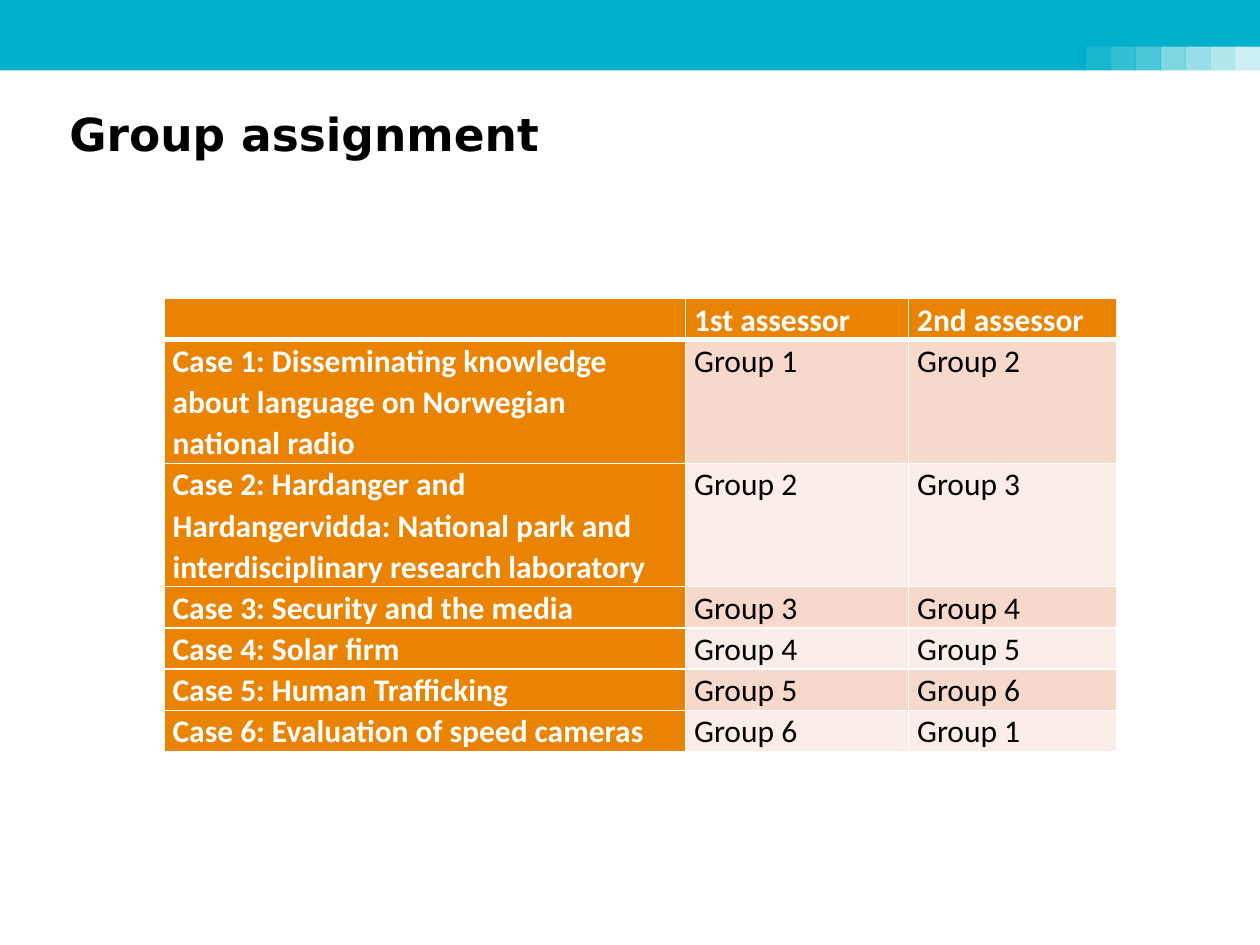
from lxml.etree import SubElement
from pptx import Presentation
from pptx.dml.color import RGBColor
from pptx.enum.shapes import MSO_SHAPE
from pptx.enum.text import MSO_ANCHOR, PP_ALIGN
from pptx.oxml.ns import qn
from pptx.util import Inches, Pt

COLORS = {
    "banner": "00B0CA",
    "header": "E98300",
    "odd_row": "F7D9CC",
    "even_row": "FBEDE7",
    "white": "FFFFFF",
    "black": "000000",
}
FADE_PERCENTS = [90, 80, 70, 50, 40, 30, 20]
ASSESSOR_HEADINGS = ["", "1st assessor", "2nd assessor"]
CASES = [
    "Case 1: Disseminating knowledge about language on Norwegian national radio",
    "Case 2: Hardanger and Hardangervidda: National park and "
    "interdisciplinary research laboratory",
    "Case 3: Security and the media",
    "Case 4: Solar firm",
    "Case 5: Human Trafficking",
    "Case 6: Evaluation of speed cameras",
]
COLUMN_WIDTHS = [4.14, 1.77, 1.65]
ROW_HEIGHTS = [0.32, 0.98, 0.98, 0.32, 0.32, 0.32, 0.32]


def rgb(name):
    """Return the named colour."""
    return RGBColor.from_string(COLORS[name])


def write_text(frame, text, font="Calibri", size=18, color="black", bold=False,
               spacing=None, insets=(0.07, 0, 0.07, 0)):
    """Write one left-aligned, top-anchored paragraph in a text frame or cell."""
    frame.margin_left, frame.margin_top, frame.margin_right, frame.margin_bottom = map(
        Inches, insets)
    frame.vertical_anchor = MSO_ANCHOR.TOP
    paragraph = getattr(frame, "text_frame", frame).paragraphs[0]
    paragraph.alignment = PP_ALIGN.LEFT
    paragraph.line_spacing = spacing
    target = paragraph
    if text:
        target = paragraph.add_run()
        target.text = text
    target.font.name = font
    target.font.size = Pt(size)
    target.font.bold = bold
    target.font.color.rgb = rgb(color)


def paint(shape, color, opacity=100):
    """Fill a shape without outline or shadow, at an opacity in percent."""
    shape.shadow.inherit = False
    shape.fill.solid()
    shape.fill.fore_color.rgb = rgb(color)
    shape.line.fill.background()
    if opacity < 100:
        tint = shape.fill._xPr.find(qn("a:solidFill"))[0]
        SubElement(tint, qn("a:alpha"), val=str(opacity * 1000))


def add_banner(slide, left, top, width, height):
    """Draw the top band with its notch and the row of fading squares."""
    notch_left, notch_top, square = left + 8.62, top + 0.36, 0.2
    right, bottom = left + width, top + height
    outline = [(notch_left, bottom), (notch_left, notch_top + 0.01),
               (right, notch_top + 0.01), (right, top), (left, top)]
    builder = slide.shapes.build_freeform(Inches(left), Inches(bottom))
    builder.add_line_segments([(Inches(x), Inches(y)) for x, y in outline])
    paint(builder.convert_to_shape(), "banner")

    pitch = (right - notch_left - square) / (len(FADE_PERCENTS) - 1)
    squares = slide.shapes.add_group_shape().shapes
    for index, opacity in enumerate(FADE_PERCENTS):
        fading_square = squares.add_shape(
            MSO_SHAPE.RECTANGLE, Inches(notch_left + index * pitch),
            Inches(notch_top), Inches(square), Inches(square))
        paint(fading_square, "banner", opacity)


def add_heading(slide, left, top, width, height):
    """Place and format the title placeholder."""
    title = slide.shapes.title
    title.left, title.top = Inches(left), Inches(top)
    title.width, title.height = Inches(width), Inches(height)
    title.text_frame.word_wrap = True
    write_text(title.text_frame, "Group assignment", font="DejaVu Sans", size=26,
               bold=True, insets=(0.04, 0.04, 0.04, 0.05))


def add_borders(cell, **widths):
    """Draw white cell borders with widths in points, keyed by side."""
    properties = cell._tc.get_or_add_tcPr()
    for side, width in widths.items():
        line = SubElement(properties, qn(f"a:ln{side}"), w=str(Pt(width)))
        fill = SubElement(line, qn("a:solidFill"))
        SubElement(fill, qn("a:srgbClr"), val=COLORS["white"])


def add_assessor_table(slide, left, top, width, height):
    """Build the table that gives each case its two assessing groups."""
    count = len(CASES)
    rows = [ASSESSOR_HEADINGS] + [
        [case, f"Group {number}", f"Group {number % count + 1}"]
        for number, case in enumerate(CASES, 1)]
    table = slide.shapes.add_table(
        len(rows), len(COLUMN_WIDTHS), Inches(left), Inches(top),
        Inches(width), Inches(height)).table
    for column, column_width in zip(table.columns, COLUMN_WIDTHS):
        column.width = Inches(column_width)
    for row, row_height in zip(table.rows, ROW_HEIGHTS):
        row.height = Inches(row_height)
    for row_index, texts in enumerate(rows):
        band = "odd_row" if row_index % 2 else "even_row"
        for column_index, text in enumerate(texts):
            cell = table.cell(row_index, column_index)
            heading = row_index == 0 or column_index == 0
            add_borders(cell, L=1, R=1, T=3 if row_index == 1 else 1,
                        B=3 if row_index == 0 else 1)
            cell.fill.solid()
            cell.fill.fore_color.rgb = rgb("header" if heading else band)
            write_text(cell, text, color="white" if heading else "black",
                       bold=heading, spacing=1.07)


def main():
    """Build and save the slide."""
    presentation = Presentation()
    presentation.slide_width, presentation.slide_height = Inches(10), Inches(7.5)
    slide = presentation.slides.add_slide(presentation.slide_layouts[5])
    add_banner(slide, 0, 0, 10, 0.56)
    add_heading(slide, 0.51, 0.8, 9.13, 1.18)
    add_assessor_table(slide, 1.3, 2.37, sum(COLUMN_WIDTHS), sum(ROW_HEIGHTS))
    presentation.save("out.pptx")


if __name__ == "__main__":
    main()
